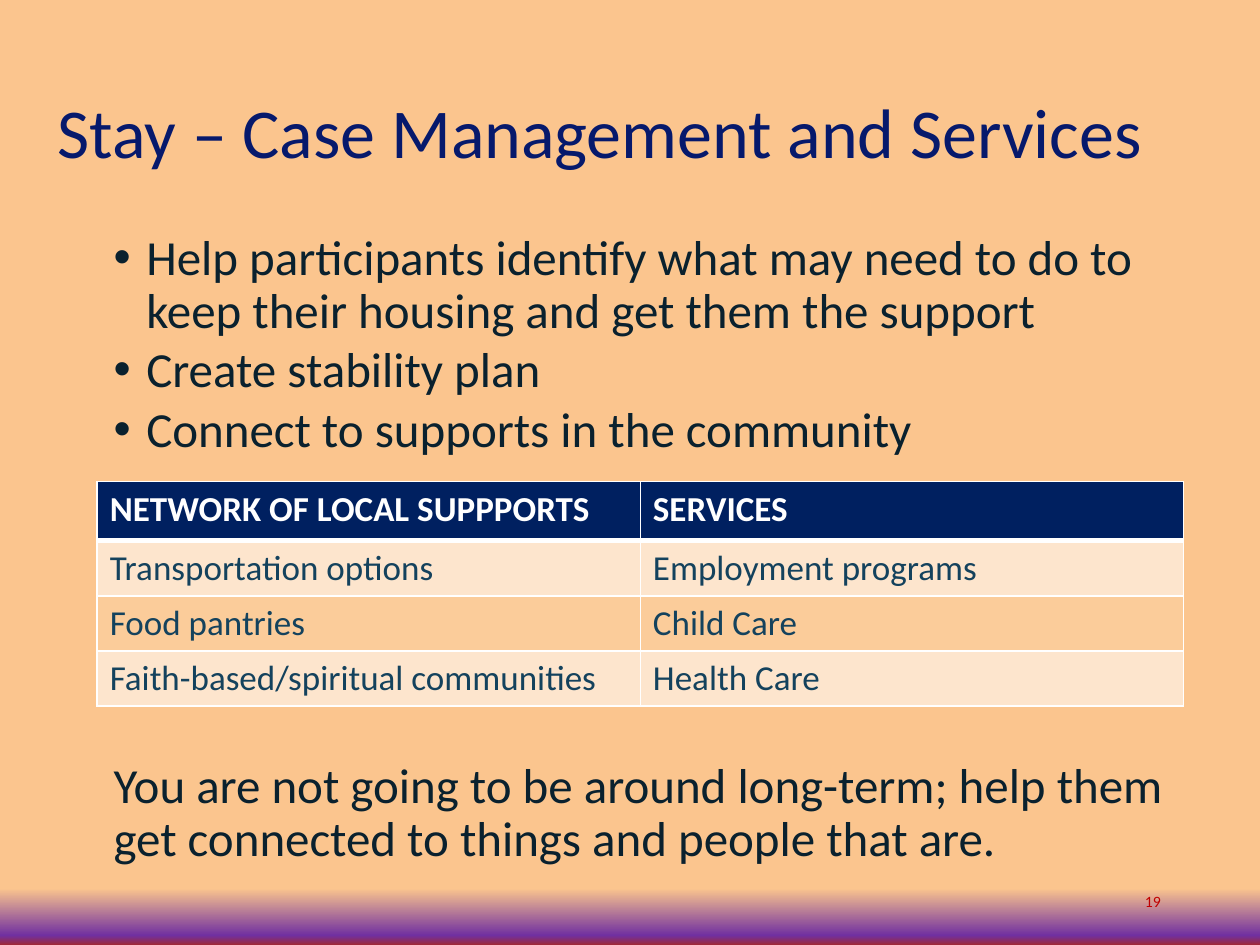
from lxml.etree import SubElement
from pptx import Presentation
from pptx.dml.color import RGBColor
from pptx.enum.text import MSO_ANCHOR, PP_ALIGN
from pptx.oxml.ns import qn
from pptx.util import Cm, Pt

TITLE = "Stay – Case Management and Services"
ACTIONS = [
    "Help participants identify what may need to do to keep their housing and get them the support",
    "Create stability plan",
    "Connect to supports in the community",
]
SUPPORTS = [
    ("NETWORK OF LOCAL SUPPPORTS", "SERVICES"),
    ("Transportation options", "Employment programs"),
    ("Food pantries", "Child Care"),
    ("Faith-based/spiritual communities", "Health Care"),
]
CLOSING = "You are not going to be around long-term; help them get connected to things and people that are."
PAGE_NUMBER = "19"

FONT = "Calibri"
PEACH = RGBColor(0xFB, 0xC5, 0x8E)
PURPLE = RGBColor(0x70, 0x30, 0xA0)
CRIMSON = RGBColor(0x9F, 0x29, 0x36)
TITLE_BLUE = RGBColor(0x06, 0x19, 0x6C)
INK = RGBColor(0x0A, 0x21, 0x2E)
RED = RGBColor(0xC0, 0x00, 0x00)
NAVY = RGBColor(0x00, 0x20, 0x60)
TEAL = RGBColor(0x14, 0x42, 0x5D)
WHITE = RGBColor(0xFF, 0xFF, 0xFF)
BANDS = [RGBColor(0xFB, 0xCC, 0x9A), RGBColor(0xFD, 0xE5, 0xCD)]
BACKGROUND_STOPS = [(89, PEACH), (94, PEACH), (99, PURPLE), (100, CRIMSON)]

BODY_LEFT, BODY_WIDTH = Cm(1.4), Cm(22.6)
HEADER_HEIGHT, ROW_HEIGHT, COLUMN_WIDTH = Cm(1.19), Cm(1.11), Cm(10.95)


def add_text(paragraph, text, size, color, bold=False):
    run = paragraph.add_run()
    run.text = text
    run.font.name = FONT
    run.font.size = Pt(size)
    run.font.bold = bold
    run.font.color.rgb = color


def add_frame(slide, left, top, width, height):
    frame = slide.shapes.add_textbox(left, top, width, height).text_frame
    frame.word_wrap = True
    return frame


def add_body_paragraph(paragraph, text, margin, indent=0, bullet=None):
    paragraph.line_spacing = 0.9
    paragraph.space_before = Pt(3.8)
    properties = paragraph._p.get_or_add_pPr()
    properties.set("marL", str(margin))
    properties.set("indent", str(indent))
    if bullet:
        SubElement(properties, qn("a:buFont"), typeface="Arial")
        SubElement(properties, qn("a:buChar"), char=bullet)
    add_text(paragraph, text, 28, INK)


def set_borders(cell, bottom_width):
    properties = cell._tc.get_or_add_tcPr()
    widths = {"a:lnL": 1, "a:lnR": 1, "a:lnT": 1, "a:lnB": bottom_width}
    for position, (side, width) in enumerate(widths.items()):
        line = SubElement(properties, qn(side), w=str(Pt(width)))
        properties.insert(position, line)
        fill = SubElement(line, qn("a:solidFill"))
        SubElement(fill, qn("a:srgbClr"), val=str(WHITE))


def set_background(slide):
    fill = slide.background.fill
    fill.gradient()
    fill.gradient_angle = 270
    stops = slide.element.find(".//" + qn("a:gsLst"))
    for stop in list(stops):
        stops.remove(stop)
    for percent, color in BACKGROUND_STOPS:
        stop = SubElement(stops, qn("a:gs"), pos=str(percent * 1000))
        SubElement(stop, qn("a:srgbClr"), val=str(color))


def add_title(slide):
    title = slide.shapes.title
    title.left, title.top, title.width, title.height = Cm(0.91), Cm(0.89), Cm(23.98), Cm(3.68)
    title.text_frame.vertical_anchor = MSO_ANCHOR.MIDDLE
    paragraph = title.text_frame.paragraphs[0]
    paragraph.alignment = PP_ALIGN.LEFT
    paragraph.line_spacing = 0.9
    add_text(paragraph, TITLE, 40, TITLE_BLUE)


def add_supports_table(slide):
    rows, columns = len(SUPPORTS), len(SUPPORTS[0])
    height = HEADER_HEIGHT + ROW_HEIGHT * (rows - 1)
    table = slide.shapes.add_table(
        rows, columns, Cm(1.96), Cm(9.71), COLUMN_WIDTH * columns, height).table
    for r, entries in enumerate(SUPPORTS):
        header = r == 0
        table.rows[r].height = HEADER_HEIGHT if header else ROW_HEIGHT
        for c, entry in enumerate(entries):
            cell = table.cell(r, c)
            cell.fill.solid()
            cell.fill.fore_color.rgb = NAVY if header else BANDS[r % 2]
            set_borders(cell, 3 if header else 1)
            add_text(cell.text_frame.paragraphs[0], entry, 20, WHITE if header else TEAL, header)


def main():
    deck = Presentation()
    deck.slide_width, deck.slide_height = Cm(25.4), Cm(19.05)
    slide = deck.slides.add_slide(deck.slide_layouts[5])
    set_background(slide)
    add_title(slide)

    actions = add_frame(slide, BODY_LEFT, Cm(4.57), BODY_WIDTH, Cm(5))
    for i, action in enumerate(ACTIONS):
        paragraph = actions.add_paragraph() if i else actions.paragraphs[0]
        add_body_paragraph(paragraph, action, Cm(1.3), Cm(-0.66), "•")

    add_supports_table(slide)

    closing = add_frame(slide, BODY_LEFT, Cm(15.22), BODY_WIDTH, Cm(2.5))
    add_body_paragraph(closing.paragraphs[0], CLOSING, Cm(0.64))

    footer = add_frame(slide, Cm(17.93), Cm(17.65), Cm(5.72), Cm(1.02))
    footer.vertical_anchor = MSO_ANCHOR.MIDDLE
    footer.paragraphs[0].alignment = PP_ALIGN.RIGHT
    add_text(footer.paragraphs[0], PAGE_NUMBER, 9, RED)

    deck.save("out.pptx")


if __name__ == "__main__":
    main()
